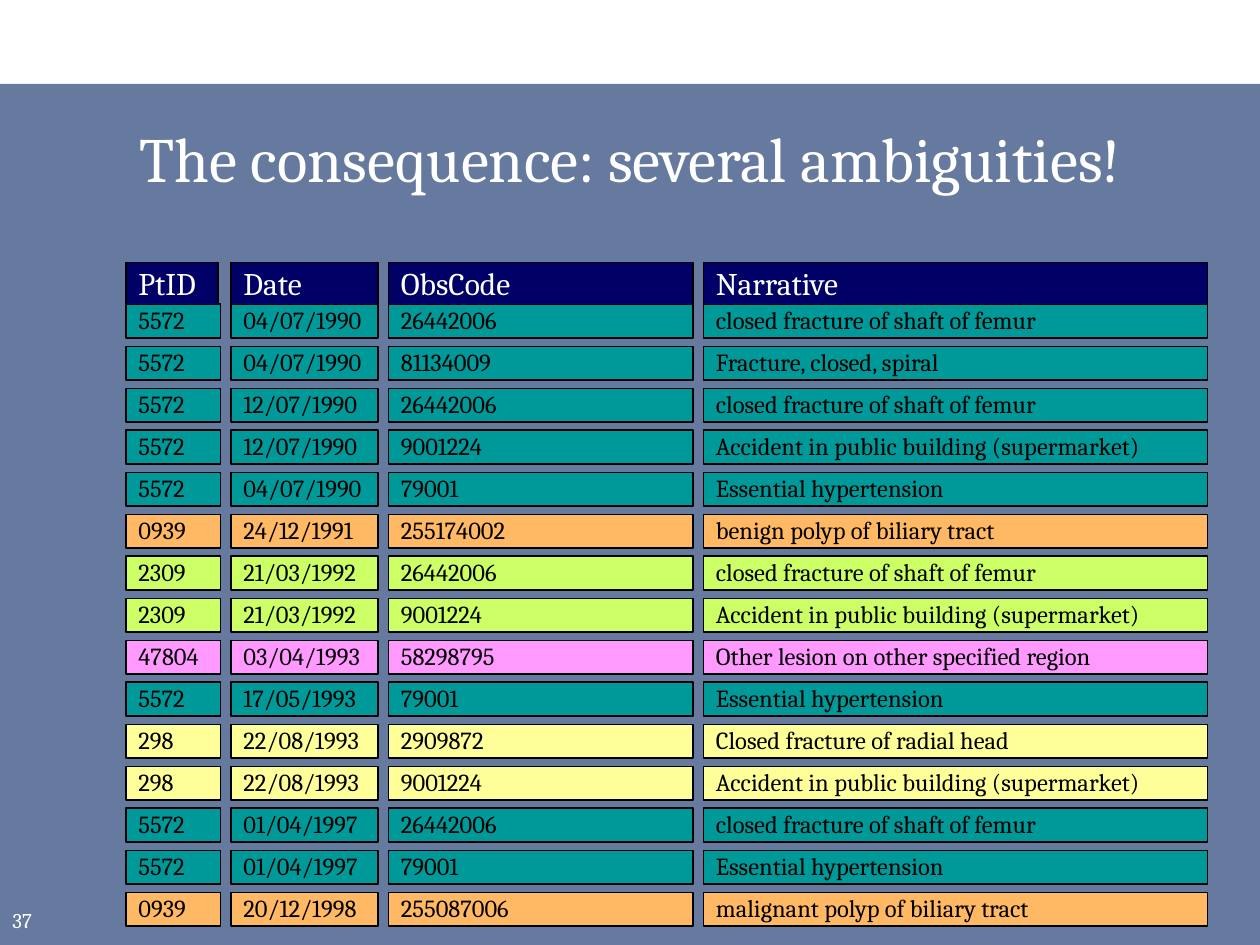
from dataclasses import dataclass

from lxml.etree import SubElement
from pptx import Presentation
from pptx.dml.color import RGBColor
from pptx.enum.shapes import MSO_SHAPE
from pptx.enum.text import MSO_ANCHOR, MSO_AUTO_SIZE, PP_ALIGN
from pptx.oxml.ns import qn
from pptx.util import Pt


@dataclass(frozen=True)
class Theme:
    font: str = "Cambria"
    panel: str = "002060"
    panel_alpha: int = 60000
    header: str = "000066"
    light: str = "FFFFFF"
    dark: str = "000000"
    title_size: int = 36
    header_size: int = 18
    record_size: int = 14
    number_size: int = 12


THEME = Theme()
PATIENT_COLOURS = {
    "5572": "009999",
    "0939": "FFB863",
    "2309": "CCFF66",
    "47804": "FF99FF",
    "298": "FFFF99",
}
HEADINGS = ("PtID", "Date", "ObsCode", "Narrative")
COLUMN_WIDTHS = (54, 84, 174, 288)
ID_HEADING_WIDTH = 52.6
COLUMN_GAP = 6
HEADER_HEIGHT = 24.2
FIRST_RECORD = 23.8
RECORD_HEIGHT = 19.3
RECORD_PITCH = 24
RECORDS = (
    ("5572", "04/07/1990", "26442006", "closed fracture of shaft of femur"),
    ("5572", "04/07/1990", "81134009", "Fracture, closed, spiral"),
    ("5572", "12/07/1990", "26442006", "closed fracture of shaft of femur"),
    ("5572", "12/07/1990", "9001224", "Accident in public building (supermarket)"),
    ("5572", "04/07/1990", "79001", "Essential hypertension"),
    ("0939", "24/12/1991", "255174002", "benign polyp of biliary tract"),
    ("2309", "21/03/1992", "26442006", "closed fracture of shaft of femur"),
    ("2309", "21/03/1992", "9001224", "Accident in public building (supermarket)"),
    ("47804", "03/04/1993", "58298795", "Other lesion on other specified region"),
    ("5572", "17/05/1993", "79001", "Essential hypertension"),
    ("298", "22/08/1993", "2909872", "Closed fracture of radial head"),
    ("298", "22/08/1993", "9001224", "Accident in public building (supermarket)"),
    ("5572", "01/04/1997", "26442006", "closed fracture of shaft of femur"),
    ("5572", "01/04/1997", "79001", "Essential hypertension"),
    ("0939", "20/12/1998", "255087006", "malignant polyp of biliary tract"),
)
CELL_FRAME = {
    "margin_left": Pt(7.2),
    "margin_right": Pt(7.2),
    "margin_top": Pt(0.72),
    "margin_bottom": Pt(0.72),
    "vertical_anchor": MSO_ANCHOR.TOP,
    "word_wrap": True,
}
HEADING_FRAME = CELL_FRAME | {"auto_size": MSO_AUTO_SIZE.SHAPE_TO_FIT_TEXT}
MIDDLE_FRAME = {
    "vertical_anchor": MSO_ANCHOR.MIDDLE,
    "word_wrap": True,
    "auto_size": MSO_AUTO_SIZE.NONE,
}


def apply_format(target, values):
    for name, value in values.items():
        setattr(target, name, value)


def place(part, box):
    lengths = (Pt(length) for length in box)
    apply_format(part, dict(zip(("left", "top", "width", "height"), lengths)))


def write(part, wording, frame_format, size, colour, align=PP_ALIGN.LEFT):
    frame = part.text_frame
    frame.text = wording
    apply_format(frame, frame_format)
    paragraph = frame.paragraphs[0]
    paragraph.alignment = align
    font = paragraph.runs[0].font
    apply_format(font, {"name": THEME.font, "size": Pt(size), "bold": False})
    font.color.rgb = RGBColor.from_string(colour)


def add_rectangle(shapes, box, fill):
    rectangle = shapes.add_shape(MSO_SHAPE.RECTANGLE, *(Pt(length) for length in box))
    rectangle.shadow.inherit = False
    rectangle.fill.solid()
    rectangle.fill.fore_color.rgb = RGBColor.from_string(fill)
    return rectangle


def add_cell(shapes, box, fill, wording, frame_format, size, colour):
    cell = add_rectangle(shapes, box, fill)
    cell.line.color.rgb = RGBColor.from_string(THEME.dark)
    cell.line.width = Pt(0.75)
    write(cell, wording, frame_format, size, colour)


def add_title(slide, box):
    title = slide.shapes.title
    place(title, box)
    write(title, "The consequence: several ambiguities!", MIDDLE_FRAME,
          THEME.title_size, THEME.light, PP_ALIGN.CENTER)


def add_panel(slide, box):
    panel = add_rectangle(slide.shapes, box, THEME.panel)
    panel.line.fill.background()
    tint = panel._element.spPr.find(f"{qn('a:solidFill')}/{qn('a:srgbClr')}")
    SubElement(tint, qn("a:alpha"), val=str(THEME.panel_alpha))
    slide.shapes.title._element.addprevious(panel._element)


def add_records(slide, left, top):
    column_lefts = [left + sum(COLUMN_WIDTHS[:column]) + column * COLUMN_GAP
                    for column in range(len(COLUMN_WIDTHS))]
    for row, record in enumerate(RECORDS):
        record_group = slide.shapes.add_group_shape()
        record_top = top + FIRST_RECORD + row * RECORD_PITCH
        for x, width, wording in zip(column_lefts, COLUMN_WIDTHS, record):
            add_cell(record_group.shapes, (x, record_top, width, RECORD_HEIGHT),
                     PATIENT_COLOURS[record[0]], wording, CELL_FRAME,
                     THEME.record_size, THEME.dark)

    heading_group = slide.shapes.add_group_shape()
    heading_widths = (ID_HEADING_WIDTH, *COLUMN_WIDTHS[1:])
    for x, width, heading in zip(column_lefts, heading_widths, HEADINGS):
        frame_format = HEADING_FRAME | {"word_wrap": heading != "PtID"}
        add_cell(heading_group.shapes, (x, top, width, HEADER_HEIGHT), THEME.header,
                 heading, frame_format, THEME.header_size, THEME.light)


def add_page_number(slide, box):
    number = slide.shapes.add_textbox(*(Pt(length) for length in box))
    write(number, "37", MIDDLE_FRAME, THEME.number_size, THEME.light)


def main():
    deck = Presentation()
    apply_format(deck, {"slide_width": Pt(720), "slide_height": Pt(540)})
    slide = deck.slides.add_slide(deck.slide_layouts.get_by_name("Title Only"))
    add_title(slide, (18, 60, 684, 60))
    add_panel(slide, (0, 48, 720, 492))
    add_records(slide, 72, 150)
    add_page_number(slide, (0, 511.2, 36, 28.8))
    deck.save("out.pptx")


if __name__ == "__main__":
    main()
